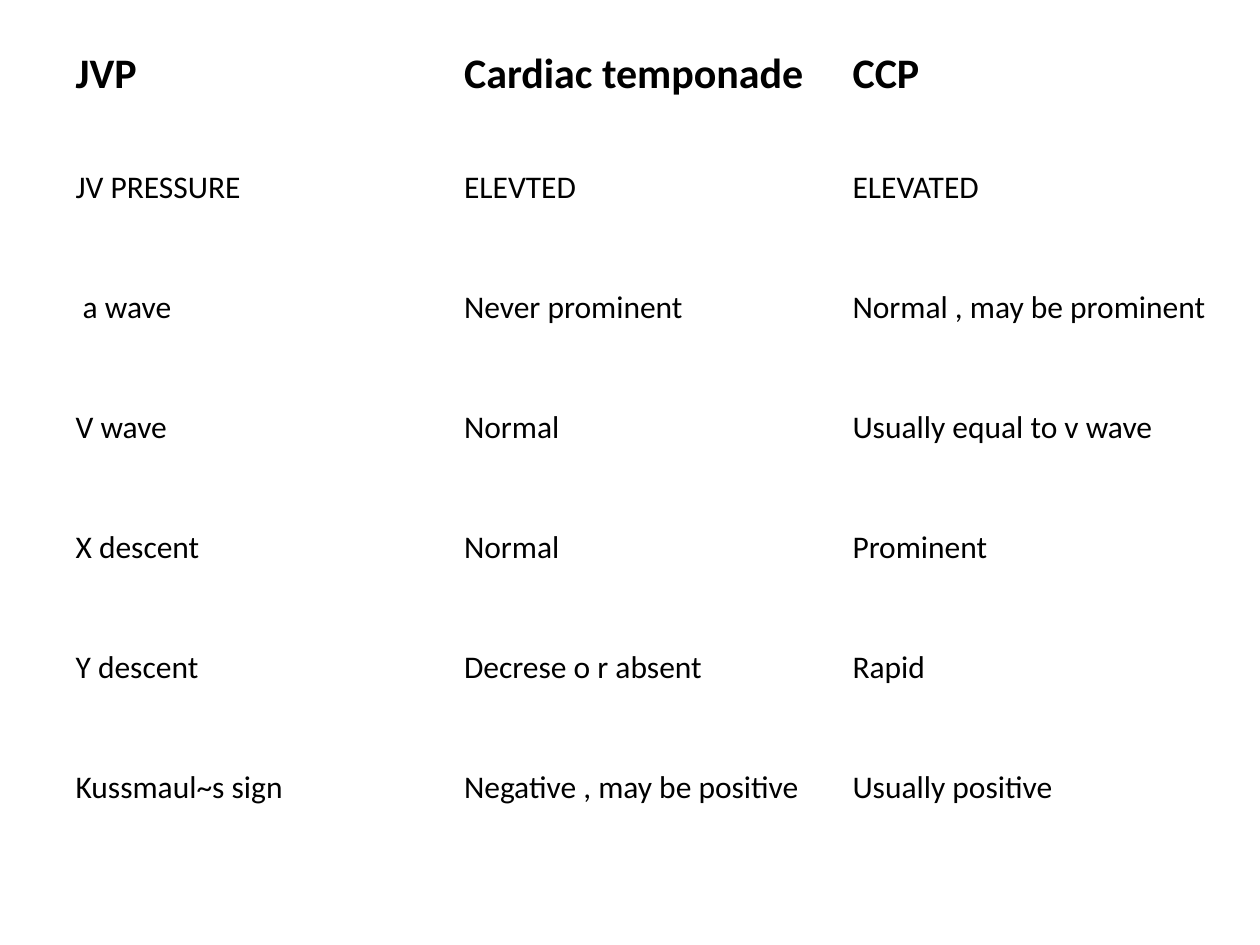
from dataclasses import dataclass

from pptx import Presentation
from pptx.dml.color import RGBColor as Color
from pptx.table import Table, _Cell as Cell
from pptx.util import Pt

BLACK = RGB = Color(0x00, 0x00, 0x00)
FONT = "Calibri"
LEFT, TOP, WIDTH, HEIGHT = 36, 24, 666, 480


@dataclass(frozen=True)
class Row:
    sign: str
    tamp: str
    ccp: str
    size: float = 18
    bold: bool = False

    @property
    def texts(self) -> tuple[str, str, str]:
        return self.sign, self.tamp, self.ccp


ROWS = [
    Row("JVP", "Cardiac temponade", "CCP", size=24, bold=True),
    Row("JV PRESSURE", "ELEVTED", "ELEVATED"),
    Row(" a wave", "Never prominent", "Normal , may be prominent"),
    Row("V wave", "Normal", "Usually equal to v wave"),
    Row("X descent", "Normal", "Prominent"),
    Row("Y descent", "Decrese o r absent", "Rapid"),
    Row("Kussmaul~s sign", "Negative , may be positive", "Usually positive"),
]


def fill_cell(cell: Cell, text: str, size: float, bold: bool) -> None:
    cell.fill.background()
    cell.text = text
    font = cell.text_frame.paragraphs[0].font
    font.name = FONT
    font.size = Pt(size)
    font.bold = bold
    font.color.rgb = BLACK


def fill_table(table: Table, rows: list[Row]) -> None:
    table.horz_banding = False
    for i, row in enumerate(rows):
        table.rows[i].height = Pt(HEIGHT / len(rows))
        for j, text in enumerate(row.texts):
            fill_cell(table.cell(i, j), text, row.size, row.bold)


def main() -> None:
    deck = Presentation()
    deck.slide_width, deck.slide_height = Pt(720), Pt(540)
    slide = deck.slides.add_slide(deck.slide_layouts[6])
    frame = slide.shapes.add_table(
        len(ROWS), len(ROWS[0].texts), Pt(LEFT), Pt(TOP), Pt(WIDTH), Pt(HEIGHT)
    )
    fill_table(frame.table, ROWS)
    deck.save("out.pptx")


if __name__ == "__main__":
    main()
